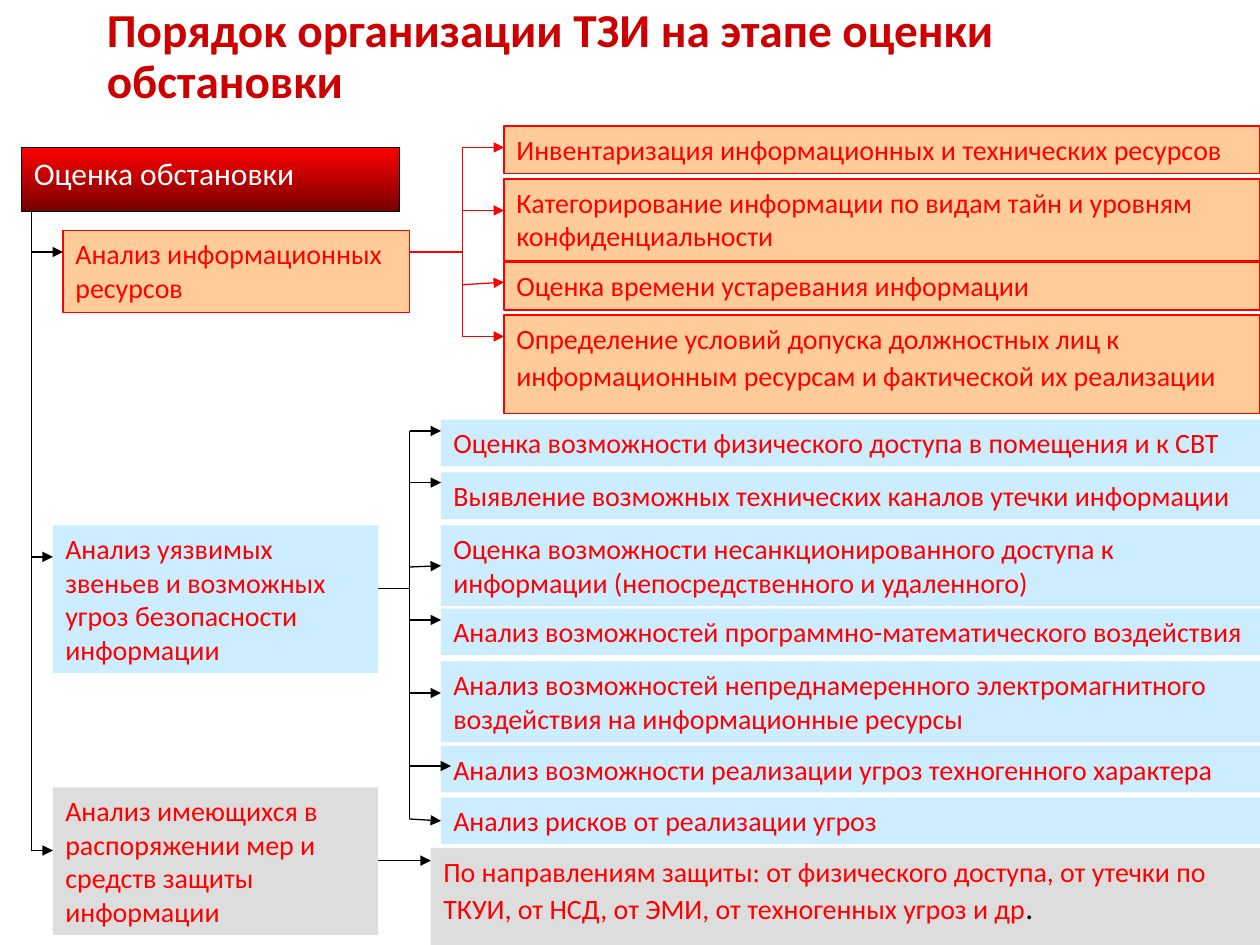
from pptx import Presentation
from pptx.dml.color import RGBColor as RGB
from pptx.enum.shapes import MSO_CONNECTOR as Link, MSO_SHAPE as Kind
from pptx.enum.text import MSO_ANCHOR as Anchor
from pptx.oxml.ns import qn
from pptx.util import Inches, Pt
from lxml import etree

RED = RGB(0xFF, 0, 0)
WINE = RGB(0x76, 0, 0)
TITLE = RGB(0xCC, 0, 0)
PEACH = RGB(0xFF, 0xCC, 0x99)
SKY = RGB(0xCC, 0xEC, 0xFF)
GREY = RGB(0xDD, 0xDD, 0xDD)
BLACK = RGB(0, 0, 0)
WHITE = RGB(0xFF, 0xFF, 0xFF)

BODY = {"name": "Calibri", "size": Pt(16)}
HEAD = {"name": "Calibri", "size": Pt(18)}
BIG = {"name": "Calibri", "size": Pt(27), "bold": True}

# Rows: top offset, height, text, arrow offset, arrow length
ASSETS = [
    (0, 0.38, "Инвентаризация информационных и технических ресурсов", 0.17, 0.33),
    (0.42, 0.65, "Категорирование информации по видам тайн и уровням конфиденциальности", 0.67, 0.33),
    (1.08, 0.38, "Оценка времени устаревания информации", 1.24, 0.33),
    (1.5, 0.78, "Определение условий допуска должностных лиц к информационным ресурсам "
     "и фактической их реализации", 1.67, 0.33),
]
THREATS = [
    (0, 0.37, "Оценка возможности физического доступа в помещения и к СВТ", 0.09, 0.25),
    (0.42, 0.37, "Выявление возможных технических каналов утечки информации", 0.5, 0.25),
    (0.84, 0.64, "Оценка возможности несанкционированного доступа к информации "
     "(непосредственного и удаленного)", 1.17, 0.25),
    (1.5, 0.37, "Анализ возможностей программно-математического воздействия", 1.59, 0.25),
    (1.92, 0.64, "Анализ возможностей непреднамеренного электромагнитного воздействия "
     "на информационные ресурсы", 2.17, 0.25),
    (2.59, 0.37, "Анализ возможности реализации угроз техногенного характера", 2.75, 0.33),
    (3, 0.37, "Анализ рисков от реализации угроз", 3.17, 0.33),
]


def write(para, text, look, color):
    run = para.add_run()
    run.text = text
    for key, value in look.items():
        setattr(run.font, key, value)
    run.font.color.rgb = color


def block(shapes, box, text, fill, edge=None, look=BODY, color=RED):
    rect = shapes.add_shape(Kind.RECTANGLE, *map(Inches, box))
    rect.shadow.inherit = False
    if fill is None:
        rect.fill.gradient()
        rect.fill.gradient_angle = 270
        for stop, tone in zip(rect.fill.gradient_stops, (RED, WINE)):
            stop.color.rgb = tone
    else:
        rect.fill.solid()
        rect.fill.fore_color.rgb = fill
    if edge is None:
        rect.line.fill.background()
    else:
        rect.line.color.rgb = edge
        rect.line.width = Pt(0.75)
    frame = rect.text_frame
    frame.word_wrap = True
    frame.vertical_anchor = Anchor.TOP
    para = frame.paragraphs[0]
    para.alignment = 1
    write(para, text, look, color)
    return rect


def line(shapes, start, end, color=BLACK, arrow=False):
    link = shapes.add_connector(Link.STRAIGHT, *map(Inches, (*start, *end)))
    link.line.color.rgb = color
    link.line.width = Pt(0.75)
    if arrow:
        etree.SubElement(link.line._get_or_add_ln(), qn("a:tailEnd"), type="triangle")
    etree.SubElement(link._element.spPr, qn("a:effectLst"))
    return link


def title(shapes, box):
    frame = shapes.add_textbox(*map(Inches, box)).text_frame
    frame.word_wrap = True
    frame.vertical_anchor = Anchor.MIDDLE
    frame.paragraphs[0].line_spacing = 0.9
    write(frame.paragraphs[0], "Порядок организации ТЗИ на этапе оценки обстановки", BIG, TITLE)


def stack(shapes, box, rows, fill, edge=None):
    left, top, width = box
    return [block(shapes, (left, top + down, width, high), text, fill, edge)
            for down, high, text, *_ in rows]


def tree(shapes, box, rows, rects, stem, color=BLACK):
    """Draw a stem, a trunk at the left of the box and an arrow to each row."""
    x, top = box
    marks = [top + row[3] for row in rows]
    line(shapes, stem, (x, stem[1]), color)
    line(shapes, (x, marks[0]), (x, marks[-1]), color)
    for row, rect, y in zip(rows, rects, marks):
        # The third asset arrow rises slightly
        rise = 0.02 if rows is ASSETS and row is rows[2] else 0
        link = line(shapes, (x, y + rise), (x + row[4], y), color, True)
        if abs(top + row[0] + row[1] / 2 - y) < 0.015:
            link.end_connect(rect, 1)


def goals(shapes, box):
    """Left column: the main task, its three parts and the trunk."""
    x, y = box
    block(shapes, (x, y, 3, 0.51), "Оценка обстановки", None, BLACK, HEAD, WHITE)
    block(shapes, (x + 0.33, y + 0.66, 2.75, 0.65),
          "Анализ информационных ресурсов", PEACH, RED)
    block(shapes, (x + 0.25, y + 3, 2.58, 1.17),
          "Анализ уязвимых звеньев и возможных угроз безопасности информации", SKY)
    block(shapes, (x + 0.25, y + 5.08, 2.58, 1.17),
          "Анализ имеющихся в распоряжении мер и средств защиты информации", GREY)
    trunk = x + 0.08
    line(shapes, (trunk, y + 0.5), (trunk, y + 5.58))
    for down, reach in ((0.83, 0.25), (3.25, 0.17), (5.58, 0.17)):
        line(shapes, (trunk, y + down), (trunk + reach, y + down), arrow=True)


def guard(shapes, box):
    """Bottom row: directions of protection."""
    rect = block(shapes, box, "По направлениям защиты: от физического доступа, от утечки по ТКУИ, "
                 "от НСД, от ЭМИ, от техногенных угроз и др", GREY)
    para = rect.text_frame.paragraphs[0]
    write(para, ". ", HEAD, BLACK)


def main():
    deck = Presentation()
    deck.slide_width, deck.slide_height = Inches(10), Inches(7.5)
    shapes = deck.slides.add_slide(deck.slide_layouts[6]).shapes

    title(shapes, (0.75, 0, 8.5, 0.92))
    line(shapes, (2.75, 6.83), (3.42, 6.83), arrow=True)
    goals(shapes, (0.17, 1.17))

    # Information assets
    rects = stack(shapes, (4, 1, 6), ASSETS, PEACH, RED)
    write(rects[-1].text_frame.paragraphs[0], " ", HEAD, BLACK)
    tree(shapes, (3.67, 1), ASSETS, rects, (3.25, 2), RED)

    # Weak links and threats
    rects = stack(shapes, (3.5, 3.33, 6.5), THREATS, SKY)
    guard(shapes, (3.42, 6.73, 6.58, 0.77))
    tree(shapes, (3.25, 3.33), THREATS, rects, (3, 4.67))

    deck.save("out.pptx")


if __name__ == "__main__":
    main()
